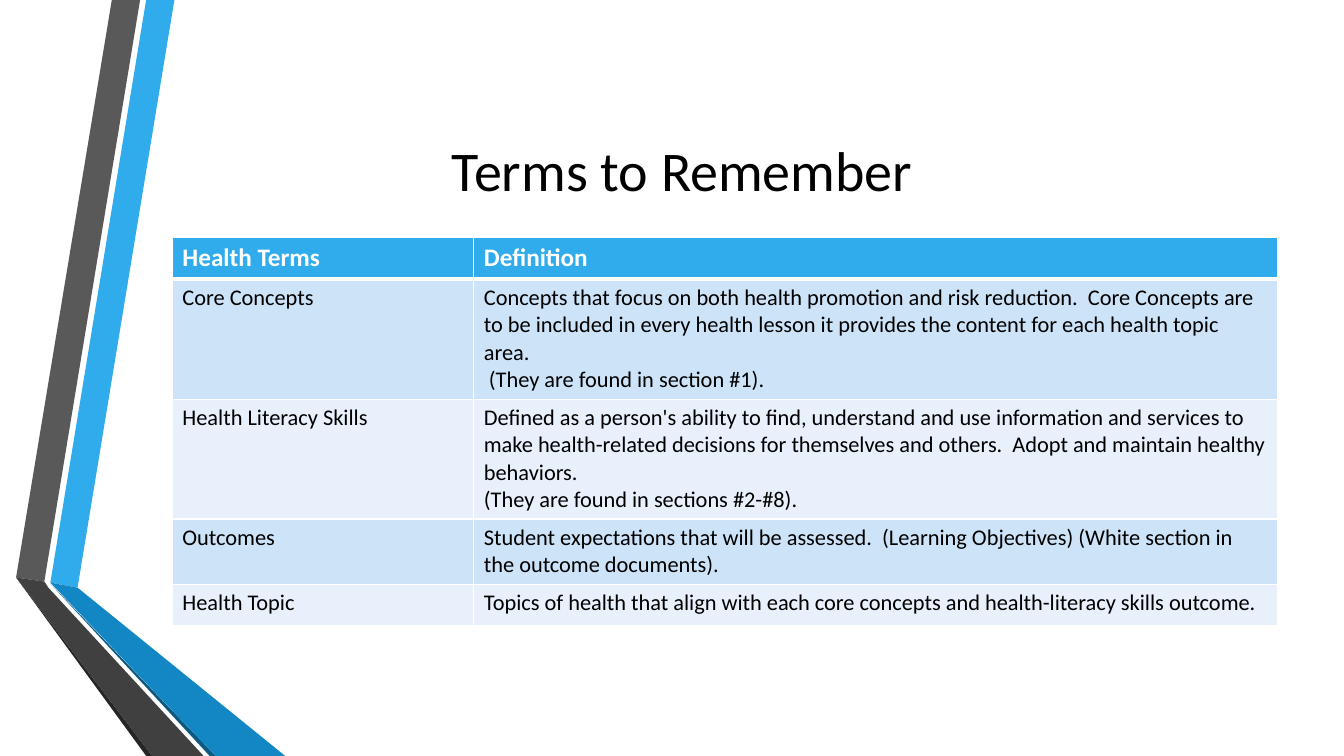
from lxml import etree
from pptx import Presentation
from pptx.dml.color import RGBColor
from pptx.enum.text import MSO_ANCHOR, PP_ALIGN
from pptx.oxml.ns import qn
from pptx.util import Inches, Pt

MIDDLE = MSO_ANCHOR.MIDDLE
CENTER = PP_ALIGN.CENTER
FONT = "Calibri"
COLORS = {
    "white": "FFFFFF", "black": "000000",
    "blue": "30ACEC", "deep": "1287C3", "navy": "0C5A82",
    "gray": "595959", "dark": "404040", "coal": "262626",
    "band": "CDE3F8", "pale": "E8F1FB",
}

# Ribbon outlines in inches from the corner of their box
RIBBONS = [
    ("blue", [(0.34, 5.78), (0.61, 5.83), (1.57, 0), (1.29, 0)]),
    ("gray", [(1.23, 0), (0.95, 0), (0, 5.73), (0.28, 5.77)]),
    ("coal", [(0, 5.73), (1.29, 7.5), (1.35, 7.5)]),
    ("navy", [(0.34, 5.79), (1.92, 7.5), (1.98, 7.5)]),
    ("deep", [(0.34, 5.78), (1.98, 7.5), (2.67, 7.5), (0.61, 5.83)]),
    ("dark", [(0, 5.73), (1.35, 7.5), (1.86, 7.5), (0.32, 5.83), (0.28, 5.77)]),
]

# Each cell is a list of paragraphs
TERMS = [
    (["Health Terms"], ["Definition"]),
    (["Core Concepts"],
     ["Concepts that focus on both health promotion and risk reduction.  "
      "Core Concepts are to be included in every health lesson it provides "
      "the content for each health topic area.",
      " (They are found in section #1)."]),
    (["Health Literacy Skills"],
     ["Defined as a person's ability to find, understand and use information "
      "and services to make health-related decisions for themselves and "
      "others.  Adopt and maintain healthy behaviors.",
      "(They are found in sections #2-#8)."]),
    (["Outcomes"],
     ["Student expectations that will be assessed.  (Learning Objectives) "
      "(White section in the outcome documents)."]),
    (["Health Topic"],
     ["Topics of health that align with each core concepts and "
      "health-literacy skills outcome."]),
]
WIDTHS = [2.99, 7.97]
HEIGHTS = [0.41, 1.19, 1.19, 0.65, 0.41]


def color(name):
    return RGBColor.from_string(COLORS[name])


def write(frame, lines, size, tint, bold=False, align=None):
    for i, line in enumerate(lines):
        para = frame.paragraphs[0] if i == 0 else frame.add_paragraph()
        para.alignment = align
        run = para.add_run()
        run.text = line
        run.font.name = FONT
        run.font.size = Pt(size)
        run.font.bold = bold
        run.font.color.rgb = color(tint)


def add_edges(cell, base):
    # Border lines must come before the fill
    props = cell._tc.get_or_add_tcPr()
    sides = [("a:lnL", 1), ("a:lnR", 1), ("a:lnT", 1), ("a:lnB", base)]
    for i, (tag, width) in enumerate(sides):
        line = etree.Element(qn(tag), w=str(Pt(width)))
        fill = etree.SubElement(line, qn("a:solidFill"))
        etree.SubElement(fill, qn("a:srgbClr"), val=COLORS["white"])
        props.insert(i, line)


def add_ribbons(slide, left, top):
    for tint, points in RIBBONS:
        spots = [(Inches(left + x), Inches(top + y)) for x, y in points]
        form = slide.shapes.build_freeform(*spots[0])
        form.add_line_segments(spots[1:], close=True)
        shape = form.convert_to_shape()
        shape.shadow.inherit = False
        shape.fill.solid()
        shape.fill.fore_color.rgb = color(tint)
        shape.line.fill.background()


def add_title(slide, left, top, width, height):
    box = slide.shapes.add_textbox(
        Inches(left), Inches(top), Inches(width), Inches(height))
    frame = box.text_frame
    frame.word_wrap = True
    frame.vertical_anchor = MIDDLE
    write(frame, ["Terms to Remember"], 40, "black", align=CENTER)


def add_terms(slide, left, top, width, height):
    table = slide.shapes.add_table(
        len(TERMS), len(WIDTHS), Inches(left), Inches(top),
        Inches(width), Inches(height)).table
    for col, size in zip(table.columns, WIDTHS):
        col.width = Inches(size)
    for r, (row, size) in enumerate(zip(table.rows, HEIGHTS)):
        row.height = Inches(size)
        head = r == 0
        tint = "blue" if head else "band" if r % 2 else "pale"
        for cell, lines in zip(row.cells, TERMS[r]):
            cell.fill.solid()
            cell.fill.fore_color.rgb = color(tint)
            add_edges(cell, 3 if head else 1)
            write(cell.text_frame, lines, 18 if head else 16,
                  "white" if head else "black", bold=head)


def main():
    deck = Presentation()
    deck.slide_width = Inches(13.33)
    deck.slide_height = Inches(7.5)
    slide = deck.slides.add_slide(deck.slide_layouts[6])
    add_ribbons(slide, 0.16, 0)
    add_title(slide, 1.71, 1.14, 10.11, 1.08)
    add_terms(slide, 1.71, 2.36, sum(WIDTHS), sum(HEIGHTS))
    deck.save("out.pptx")


if __name__ == "__main__":
    main()
